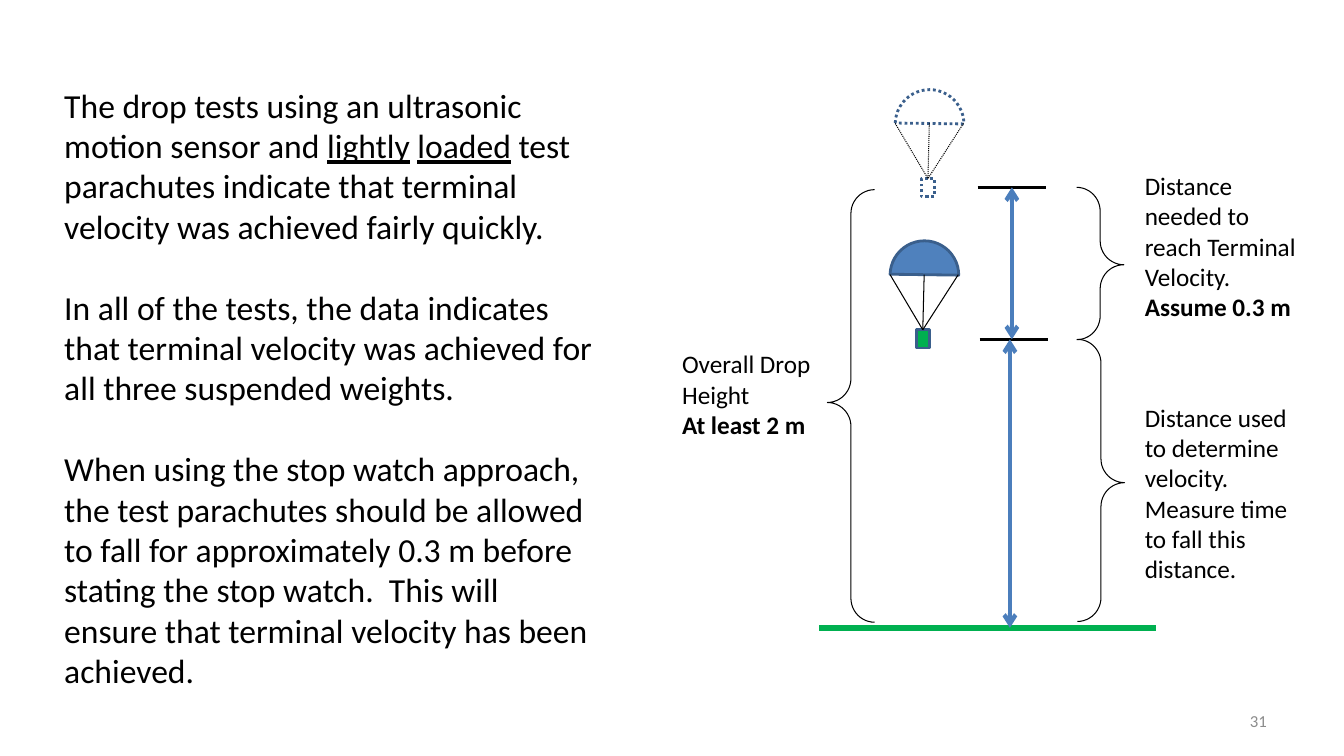
from dataclasses import dataclass

from lxml.etree import SubElement
from pptx import Presentation
from pptx.dml.color import RGBColor
from pptx.enum.dml import MSO_LINE_DASH_STYLE as Dash
from pptx.enum.shapes import MSO_CONNECTOR_TYPE as ConnectorType
from pptx.enum.shapes import MSO_SHAPE as Shape
from pptx.enum.text import MSO_ANCHOR as Anchor
from pptx.enum.text import PP_ALIGN as Align
from pptx.oxml.ns import qn
from pptx.util import Cm, Pt


@dataclass(frozen=True)
class Theme:
    """Colours, font and type sizes of the slide."""
    font: str = "Calibri"
    ink: str = "000000"
    muted: str = "8C8C8C"
    canopy: str = "4F81BD"
    outline: str = "3A5F8C"
    arrow: str = "4B7EBC"
    green: str = "00B050"
    body_size: float = 24
    label_size: float = 18
    number_size: float = 12


THEME = Theme()


def style_line(line, color, width, dash=None):
    """Set the colour, width and optional dash of a line."""
    line.color.rgb = RGBColor.from_string(color)
    line.width = Pt(width)
    if dash:
        line.dash_style = dash


def add_text(slide, box, paragraphs, size, color=THEME.ink, gap=0):
    """Add a text box from paragraphs given as lists of (text, emphasis) runs."""
    frame = slide.shapes.add_textbox(*map(Cm, box)).text_frame
    frame.word_wrap = True
    for index, runs in enumerate(paragraphs):
        paragraph = frame.add_paragraph() if index else frame.paragraphs[0]
        if index:
            paragraph.space_before = Pt(gap)
        for text, emphasis in runs:
            run = paragraph.add_run()
            run.text = text
            run.font.name = THEME.font
            run.font.size = Pt(size)
            run.font.color.rgb = RGBColor.from_string(color)
            run.font.bold = emphasis == "bold"
            run.font.underline = emphasis == "underline"
    return frame


def add_outline(slide, kind, box, color, width, fill=None, dash=None, rotation=0, adjustments=()):
    """Add a preset shape with an outline and an optional fill."""
    shape = slide.shapes.add_shape(kind, *map(Cm, box))
    shape.shadow.inherit = False
    shape.rotation = rotation
    for index, value in enumerate(adjustments):
        shape.adjustments[index] = value
    if fill:
        shape.fill.solid()
        shape.fill.fore_color.rgb = RGBColor.from_string(fill)
    else:
        shape.fill.background()
    style_line(shape.line, color, width, dash)
    return shape


def add_line(slide, start, end, color, width, dash=None, arrows=False):
    """Add a straight line, with arrowheads at both ends if asked."""
    connector = slide.shapes.add_connector(ConnectorType.STRAIGHT, *map(Cm, start + end))
    style_line(connector.line, color, width, dash)
    if arrows:
        for tag in ("a:headEnd", "a:tailEnd"):
            SubElement(connector.line._get_or_add_ln(), qn(tag), type="arrow")
    SubElement(connector._element.spPr, qn("a:effectLst"))
    return connector


def add_parachute(slide, left, top, canopy_fill=None, load_fill=None, dash=None):
    """Add a canopy, its load and the three cords between them."""
    add_outline(slide, Shape.CHORD, (left, top, 1.73, 1.73), THEME.outline, 2,
                canopy_fill, dash, 90, (54.919, 162))
    load_top = top + 2.24
    load = add_outline(slide, Shape.RECTANGLE, (left + 0.66, load_top, 0.33, 0.46),
                       THEME.outline, 2, load_fill, dash)
    for offset in (0, 0.86, 1.72):
        cord = add_line(slide, (left + offset, top + 0.85), (left + 0.82, load_top),
                        THEME.ink, 0.75, dash)
        cord.end_connect(load, 0)


def add_brace(slide, left, top, height, rotation=0):
    """Add a curly brace that spans a height."""
    add_outline(slide, Shape.LEFT_BRACE, (left, top, 1.19, height), THEME.ink, 0.75,
                rotation=rotation, adjustments=(0.507, 0.492))


def add_distances(slide):
    """Add the ground, the height marks, the distance arrows and the braces."""
    start, terminal, ground = 4.72, 8.55, 15.82
    add_line(slide, (20.65, ground), (29.13, ground), THEME.green, 4.5)
    for left, height in ((24.64, start), (24.69, terminal)):
        add_line(slide, (left, height), (left + 1.72, height), THEME.ink, 2.25)
    for center, top, bottom in ((25.5, start, terminal), (25.45, terminal, ground)):
        add_line(slide, (center, top), (center, bottom), THEME.arrow, 3, arrows=True)
    add_brace(slide, 20.85, 4.78, 10.9)
    add_brace(slide, 27.13, start, 3.84, 180)
    add_brace(slide, 27.15, terminal, 7.11, 180)


def add_explanation(slide):
    """Add the running text on the left."""
    add_text(slide, (1.37, 2.01, 13.89, 16.66), [
        [("The drop tests using an ultrasonic motion sensor and ", None),
         ("lightly", "underline"), (" ", None), ("loaded", "underline"),
         (" test parachutes indicate that terminal velocity was achieved fairly quickly.", None)],
        [("In all of the tests, the data indicates that terminal velocity was achieved "
          "for all three suspended weights.", None)],
        [("When using the stop watch approach, the test parachutes should be allowed to fall "
          "for approximately 0.3 m before stating the stop watch.  This will ensure that "
          "terminal velocity has been achieved.", None)],
    ], THEME.body_size, gap=29)


def add_labels(slide):
    """Add the labels beside the braces."""
    add_text(slide, (28.6, 4.17, 4.47, 4.11), [
        [("Distance needed to reach Terminal Velocity.  ", None), ("Assume 0.3 m", "bold")],
    ], THEME.label_size)
    add_text(slide, (28.6, 10.01, 4.39, 4.88), [
        [("Distance used to determine velocity.  Measure time to fall this distance.", None)],
    ], THEME.label_size)
    add_text(slide, (16.94, 8.66, 3.84, 2.57), [
        [("Overall Drop Height", None)],
        [("At least 2 m", "bold")],
    ], THEME.label_size)


def add_page_number(slide):
    """Add the page number at the lower right."""
    frame = add_text(slide, (24.28, 17.65, 7.9, 1.02), [[("31", None)]],
                     THEME.number_size, THEME.muted)
    frame.vertical_anchor = Anchor.MIDDLE
    frame.paragraphs[0].alignment = Align.RIGHT


def main():
    """Build the slide and save it."""
    presentation = Presentation()
    presentation.slide_width, presentation.slide_height = Cm(33.87), Cm(19.05)
    slide = presentation.slides.add_slide(presentation.slide_layouts[6])
    add_page_number(slide)
    add_explanation(slide)
    add_parachute(slide, 22.43, 6.07, THEME.canopy, THEME.green)
    add_parachute(slide, 22.56, 2.26, dash=Dash.ROUND_DOT)
    add_distances(slide)
    add_labels(slide)
    presentation.save("out.pptx")


if __name__ == "__main__":
    main()
